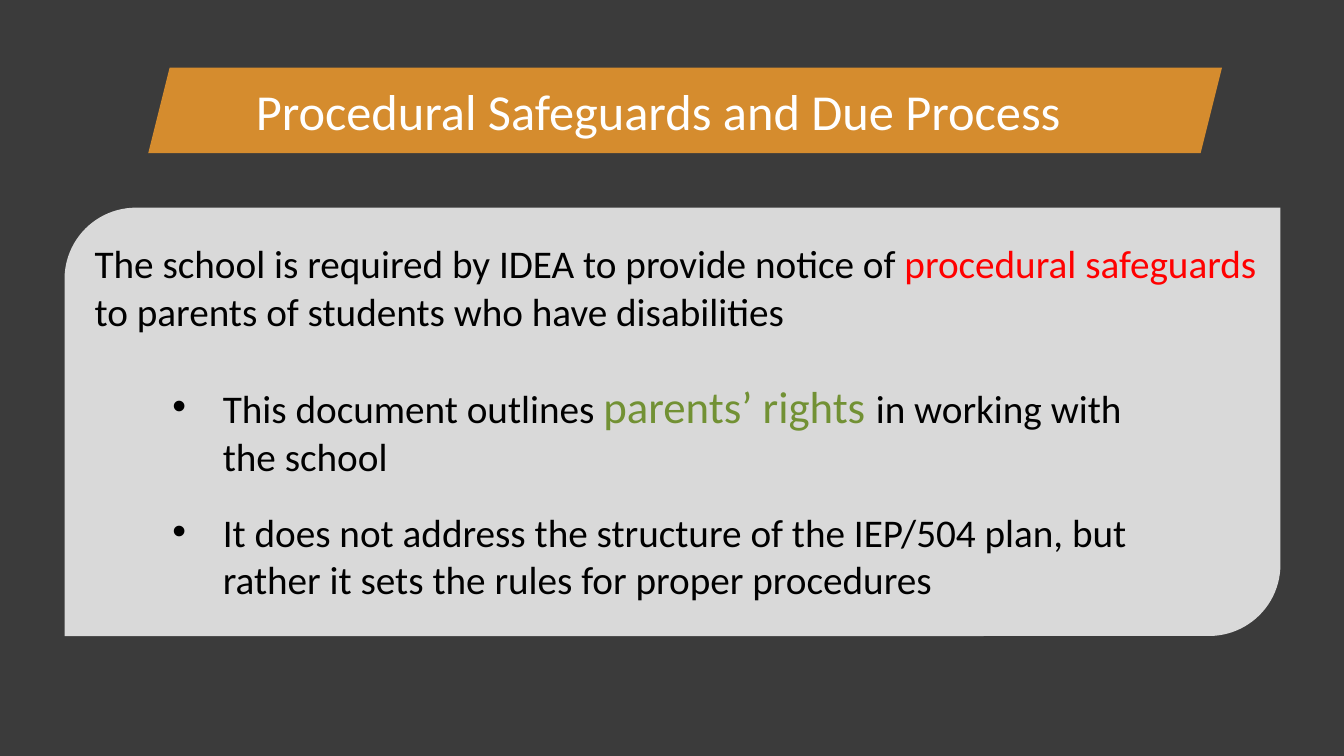
from pptx import Presentation
from pptx.dml.color import RGBColor
from pptx.enum.shapes import MSO_SHAPE as Preset
from pptx.enum.text import MSO_ANCHOR as Anchor, MSO_AUTO_SIZE as AutoSize, PP_ALIGN as Align
from pptx.oxml.ns import qn
from pptx.util import Inches, Pt
from lxml import etree

FONT = "Calibri"
DARK, ORANGE, PANEL = "3B3B3B", "D58C2E", "D9D9D9"
BLACK, WHITE, RED, GREEN = "000000", "FFFFFF", "FF0000", "729134"


def color(value):
    return RGBColor.from_string(value)


def place(shape, left, top, width, height):
    shape.left, shape.top = Inches(left), Inches(top)
    shape.width, shape.height = Inches(width), Inches(height)


def add_backdrop(slide, preset, box, fill):
    """Add a plain filled shape behind the slide's placeholders."""
    shape = slide.shapes.add_shape(preset, *map(Inches, box))
    shape.shadow.inherit = False
    shape.fill.solid()
    shape.fill.fore_color.rgb = color(fill)
    shape.line.fill.background()
    slide.shapes.title.element.addprevious(shape.element)


def prepare_frame(shape, anchor=Anchor.TOP):
    frame = shape.text_frame
    frame.word_wrap = True
    frame.auto_size = AutoSize.NONE
    frame.vertical_anchor = anchor
    return frame


def add_runs(paragraph, runs):
    """Each run is its text, size in points and color."""
    for text, size, run_color in runs:
        run = paragraph.add_run()
        run.text = text
        run.font.name = FONT
        run.font.size = Pt(size)
        run.font.color.rgb = color(run_color)


def set_bullet(paragraph, indent):
    properties = paragraph.element.get_or_add_pPr() if hasattr(paragraph, "element") else paragraph._p.get_or_add_pPr()
    properties.set("marL", str(Inches(indent)))
    properties.set("indent", str(-Inches(indent)))
    etree.SubElement(properties, qn("a:buFont")).set("typeface", "Arial")
    etree.SubElement(properties, qn("a:buChar")).set("char", "•")


def build_title(slide, left, top, width, height):
    add_backdrop(slide, Preset.PARALLELOGRAM, (left, top, width, height), ORANGE)
    title = slide.shapes.title
    # The wording sits slightly left of the banner's center
    place(title, left, top, width - 0.53, height)
    paragraph = prepare_frame(title, Anchor.MIDDLE).paragraphs[0]
    paragraph.alignment = Align.CENTER
    add_runs(paragraph, [("Procedural Safeguards and Due Process", 36, WHITE)])


def build_panel(slide, left, top, width, height):
    add_backdrop(slide, Preset.ROUND_2_DIAG_RECTANGLE, (left, top, width, height), PANEL)

    # Introductory sentence
    intro = slide.shapes.add_textbox(
        Inches(left + 0.2), Inches(top + 0.27), Inches(width - 0.16), Inches(1.04))
    add_runs(prepare_frame(intro).paragraphs[0], [
        ("The school is required by IDEA to provide notice of ", 28, BLACK),
        ("procedural safeguards ", 28, RED),
        ("to parents of students who have disabilities", 28, BLACK),
    ])

    # Bulleted list
    body = slide.placeholders[1]
    place(body, left + 0.97, top + 1.65, 10.11, 2.33)
    frame = prepare_frame(body)
    points = [
        [("This document outlines ", 28, BLACK),
         ("parents’ rights ", 32, GREEN),
         ("in working with the school", 28, BLACK)],
        [("It does not address the structure of the IEP/504 plan, but "
          "rather it sets the rules for proper procedures", 28, BLACK)],
    ]
    for index, runs in enumerate(points):
        paragraph = frame.add_paragraph() if index else frame.paragraphs[0]
        paragraph.space_before = Pt(20 if index else 0)
        set_bullet(paragraph, 0.5)
        add_runs(paragraph, runs)


def main():
    presentation = Presentation()
    presentation.slide_width, presentation.slide_height = Inches(13.33), Inches(7.5)
    slide = presentation.slides.add_slide(presentation.slide_layouts[1])
    slide.background.fill.solid()
    slide.background.fill.fore_color.rgb = color(DARK)
    build_title(slide, 1.47, 0.67, 10.65, 0.85)
    build_panel(slide, 0.64, 2.06, 12.06, 4.25)
    presentation.save("out.pptx")


if __name__ == "__main__":
    main()
